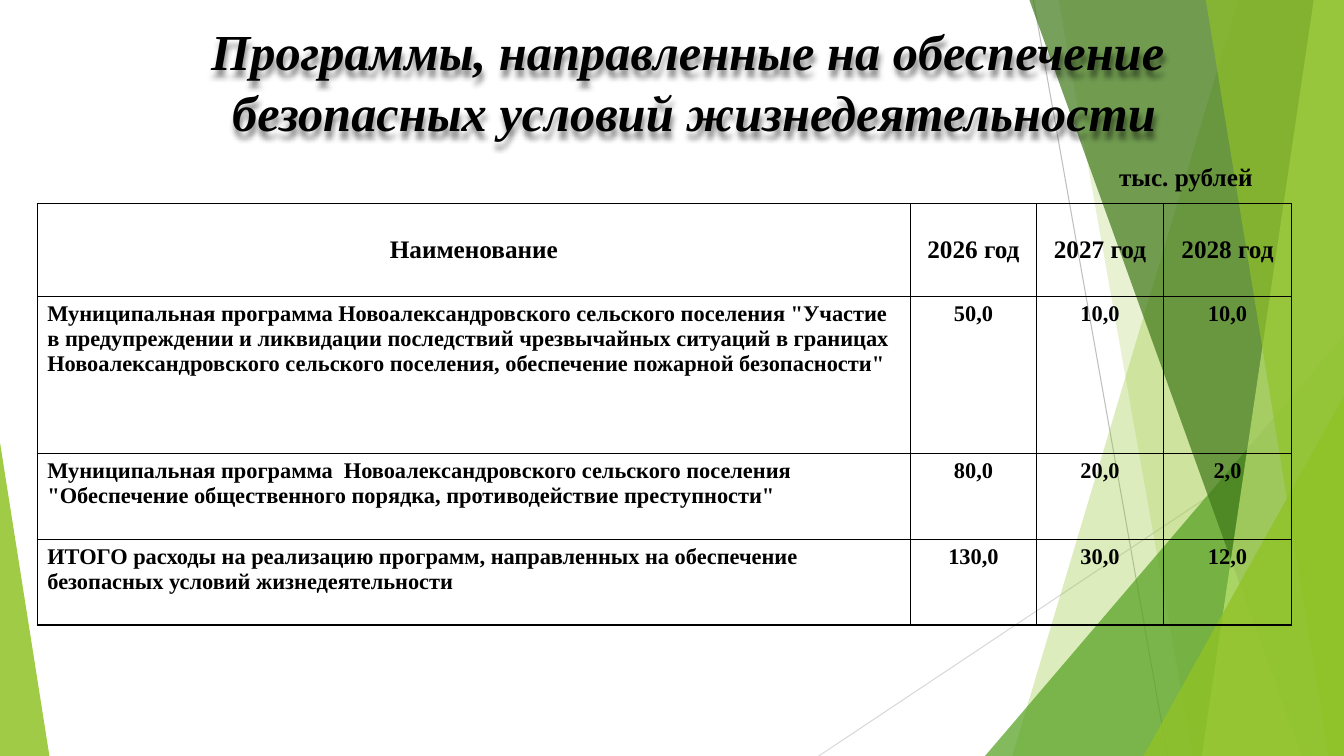
from lxml import etree
from pptx import Presentation
from pptx import util as u
from pptx.dml.color import RGBColor
from pptx.enum import shapes, text
from pptx.oxml import ns

BLACK = RGBColor(0x00, 0x00, 0x00)
GREY = RGBColor(0xBF, 0xBF, 0xBF)
PALE_GREY = RGBColor(0xD9, 0xD9, 0xD9)
LIME = RGBColor(0x90, 0xC2, 0x26)
PALE_LIME = RGBColor(0xC0, 0xE4, 0x74)
GREEN = RGBColor(0x54, 0xA0, 0x21)
DARK_GREEN = RGBColor(0x3F, 0x78, 0x19)

WIDTH, HEIGHT = 13.33, 7.5
LEFT, CENTER = text.PP_ALIGN.LEFT, text.PP_ALIGN.CENTER
TOP, MIDDLE = text.MSO_ANCHOR.TOP, text.MSO_ANCHOR.MIDDLE


def sub(parent, tag, **attrs):
    return etree.SubElement(parent, ns.qn(tag), **attrs)


def write(tf, content, size=18, align=LEFT, italic=False):
    """Fill a text frame, one paragraph per line of content."""
    for i, line in enumerate(content.split("\n")):
        p = tf.add_paragraph() if i else tf.paragraphs[0]
        p.alignment = align
        r = p.add_run()
        r.text = line
        r.font.name = "Times New Roman"
        r.font.size = u.Pt(size)
        r.font.bold = True
        r.font.italic = italic
        r.font.color.rgb = BLACK


class Deck:
    def __init__(self):
        self.prs = Presentation()
        self.prs.slide_width = u.Inches(WIDTH)
        self.prs.slide_height = u.Inches(HEIGHT)
        self.s = self.prs.slides.add_slide(self.prs.slide_layouts[6])

    def line(self, x1, y1, x2, y2, color):
        c = self.s.shapes.add_connector(
            shapes.MSO_CONNECTOR.STRAIGHT,
            *(u.Inches(v) for v in (x1, y1, x2, y2)))
        c.line.color.rgb = color
        c.line.width = u.Pt(0.75)
        sub(c._element.spPr, "a:effectLst")

    def paint(self, sp, color, opacity):
        sp.shadow.inherit = False
        sp.line.fill.background()
        sp.fill.solid()
        sp.fill.fore_color.rgb = color
        clr = sp._element.spPr.find(ns.qn("a:solidFill"))[0]
        sub(clr, "a:alpha", val=str(opacity * 1000))

    def band(self, top_x, bottom_x, color, opacity):
        """Area between a slanted edge and the right side of the slide."""
        points = [(top_x, 0), (WIDTH, 0), (WIDTH, HEIGHT), (bottom_x, HEIGHT)]
        points = [(u.Inches(x), u.Inches(y)) for x, y in points]
        fb = self.s.shapes.build_freeform(*points[0])
        fb.add_line_segments(points[1:], close=True)
        self.paint(fb.convert_to_shape(), color, opacity)

    def triangle(self, x, y, w, apex, color, opacity):
        """Triangle standing on the bottom edge of the slide."""
        sp = self.s.shapes.add_shape(
            shapes.MSO_SHAPE.ISOSCELES_TRIANGLE,
            *(u.Inches(v) for v in (x, y, w, HEIGHT - y)))
        sp.adjustments[0] = apex
        self.paint(sp, color, opacity)

    def title(self, x, y, w, h, content):
        sp = self.s.shapes.add_shape(
            shapes.MSO_SHAPE.ROUNDED_RECTANGLE,
            *(u.Inches(v) for v in (x, y, w, h)))
        sp.fill.background()
        sp.line.fill.background()
        sp.shadow.inherit = False
        # Soft shadow, which falls on the letters of an unfilled shape
        effects = sp._element.spPr.find(ns.qn("a:effectLst"))
        shadow = sub(effects, "a:outerShdw", blurRad="50800", dist="50800",
                     dir="5400000", rotWithShape="0")
        clr = sub(shadow, "a:srgbClr", val=str(BLACK))
        sub(clr, "a:alpha", val="45000")
        tf = sp.text_frame
        tf.word_wrap = True
        tf.vertical_anchor = MIDDLE
        tf.margin_left = tf.margin_right = tf.margin_top = tf.margin_bottom = 0
        write(tf, content, size=36, align=CENTER, italic=True)

    def label(self, x, y, w, h, content):
        sp = self.s.shapes.add_textbox(*(u.Inches(v) for v in (x, y, w, h)))
        sp.text_frame.word_wrap = True
        write(sp.text_frame, content)

    def table(self, x, y, widths, heights, rows):
        tbl = self.s.shapes.add_table(
            len(rows), len(widths), u.Inches(x), u.Inches(y),
            u.Inches(sum(widths)), u.Inches(sum(heights))).table
        tbl.first_row = tbl.horz_banding = False
        for col, w in zip(tbl.columns, widths):
            col.width = u.Inches(w)
        for i, (row, h) in enumerate(zip(rows, heights)):
            tbl.rows[i].height = u.Inches(h)
            for j, content in enumerate(row):
                cell = tbl.cell(i, j)
                cell.vertical_anchor = TOP if i else MIDDLE
                write(cell.text_frame, content, size=16 if i else 18,
                      align=LEFT if i and not j else CENTER)
                self.borders(cell)
                cell.fill.background()

    def borders(self, cell):
        tc_pr = cell._tc.get_or_add_tcPr()
        for side in ("a:lnL", "a:lnR", "a:lnT", "a:lnB"):
            ln = sub(tc_pr, side, w=str(u.Pt(1)))
            sub(sub(ln, "a:solidFill"), "a:srgbClr", val=str(BLACK))


def main():
    deck = Deck()

    # Green backdrop
    deck.line(10.25, 0, 11.58, HEIGHT, GREY)
    deck.line(WIDTH, 4.03, 8.12, HEIGHT, PALE_GREY)
    deck.band(12.28, 10.04, LIME, 30)
    deck.band(10.5, 11.83, LIME, 20)
    deck.triangle(9.77, 3.33, 3.56, 1, GREEN, 72)
    deck.band(10.21, 12.91, DARK_GREEN, 70)
    deck.band(13.03, 11.92, PALE_LIME, 70)
    deck.band(11.96, 13.18, LIME, 65)
    deck.triangle(11.34, 3.93, 1.99, 1, LIME, 80)
    deck.triangle(0, 4.39, 0.49, 0, LIME, 85)

    # Heading
    deck.title(1.04, 0.29, 11.69, 1.02,
               "Программы, направленные на обеспечение \n"
               "безопасных условий жизнедеятельности")

    # Programme spending
    deck.table(0.37, 2.02, [8.66, 1.25, 1.26, 1.27], [0.92, 1.56, 0.85, 0.85], [
        ("Наименование", "2026 год", "2027 год", "2028 год"),
        ('Муниципальная программа Новоалександровского сельского поселения '
         '"Участие в предупреждении и ликвидации последствий чрезвычайных '
         'ситуаций в границах Новоалександровского сельского поселения, '
         'обеспечение пожарной безопасности"', "50,0", "10,0", "10,0"),
        ('Муниципальная программа  Новоалександровского сельского поселения '
         '"Обеспечение общественного порядка, противодействие преступности"',
         "80,0", "20,0", "2,0"),
        ("ИТОГО расходы на реализацию программ, направленных на обеспечение "
         "безопасных условий жизнедеятельности", "130,0", "30,0", "12,0"),
    ])
    deck.label(11, 1.55, 1.99, 0.4, "тыс. рублей")

    deck.prs.save("out.pptx")


if __name__ == "__main__":
    main()
